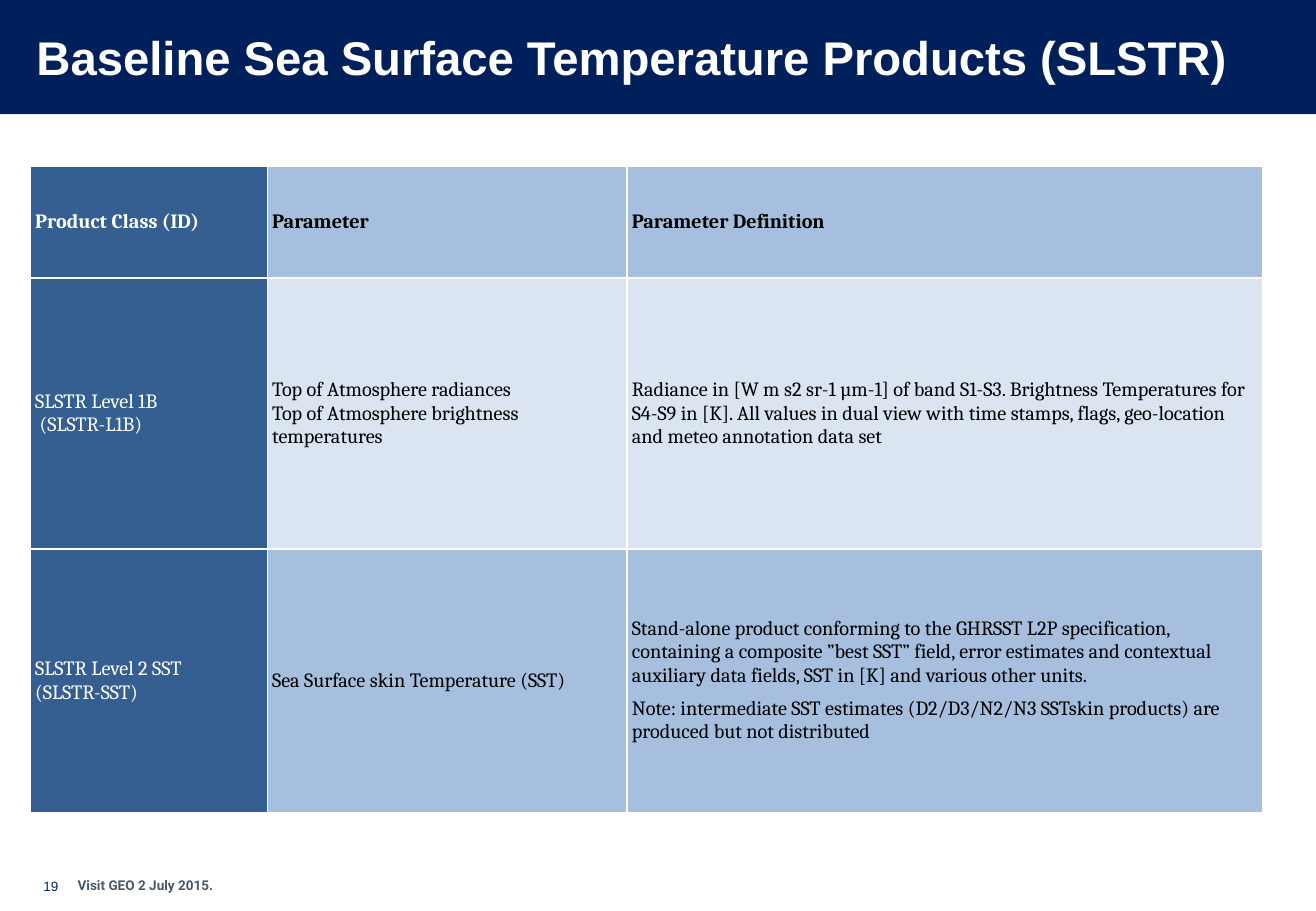
from lxml import etree
from pptx import Presentation
from pptx.dml.color import RGBColor
from pptx.enum.shapes import MSO_SHAPE
from pptx.enum.text import MSO_ANCHOR, PP_ALIGN
from pptx.oxml.ns import qn
from pptx.util import Inches, Pt

RECTANGLE = MSO_SHAPE.RECTANGLE
MIDDLE, TOP = MSO_ANCHOR.MIDDLE, MSO_ANCHOR.TOP
LEFT, CENTER = PP_ALIGN.LEFT, PP_ALIGN.CENTER

COLORS = {
    "navy": "00205B",
    "number": "002569",
    "footer": "47586A",
    "white": "FFFFFF",
    "black": "000000",
    "class": "365F91",
    "band": "A7BFDE",
    "pale": "DBE5F1",
}

COLUMN_WIDTHS = [1.95, 2.96, 5.23]
ROW_HEIGHTS = [0.92, 2.23, 2.17]
ROW_FILLS = ["band", "pale", "band"]
PRODUCTS = [
    [["Product Class (ID)"], ["Parameter"], ["Parameter Definition"]],
    [
        ["SLSTR Level 1B\n (SLSTR-L1B)"],
        ["Top of Atmosphere radiances\nTop of Atmosphere brightness temperatures"],
        ["Radiance in [W m s2 sr-1 µm-1] of band S1-S3. Brightness Temperatures for "
         "S4-S9 in [K]. All values in dual view with time stamps, flags, geo-location "
         "and meteo annotation data set"],
    ],
    [
        ["SLSTR Level 2 SST\n(SLSTR-SST)"],
        ["Sea Surface skin Temperature (SST)"],
        ["Stand-alone product conforming to the GHRSST L2P specification, containing "
         "a composite ”best SST” field, error estimates and contextual auxiliary data "
         "fields, SST in [K] and various other units.",
         "Note: intermediate SST estimates (D2/D3/N2/N3 SSTskin products) are "
         "produced but not distributed"],
    ],
]


class SlideBuilder:
    def __init__(self, slide):
        self.slide = slide

    def color(self, name):
        return RGBColor.from_string(COLORS[name])

    def add_run(self, paragraph, text, font, size, color, bold=False):
        for index, line in enumerate(text.split("\n")):
            if index:
                paragraph.add_line_break()
            run = paragraph.add_run()
            run.text = line
            run.font.name = font
            run.font.size = Pt(size)
            run.font.bold = bold
            run.font.color.rgb = self.color(color)

    def rectangle(self, left, top, width, height, fill):
        shape = self.slide.shapes.add_shape(
            RECTANGLE, Inches(left), Inches(top), Inches(width), Inches(height))
        shape.shadow.inherit = False
        shape.fill.solid()
        shape.fill.fore_color.rgb = self.color(fill)
        shape.line.fill.background()

    def text(self, left, top, width, height, text, font, size, color, bold=False,
             align=LEFT, anchor=TOP, margins=(0.1, 0.05), wrap=True):
        box = self.slide.shapes.add_textbox(
            Inches(left), Inches(top), Inches(width), Inches(height))
        frame = box.text_frame
        frame.word_wrap = wrap
        frame.vertical_anchor = anchor
        frame.margin_left = frame.margin_right = Inches(margins[0])
        frame.margin_top = frame.margin_bottom = Inches(margins[1])
        paragraph = frame.paragraphs[0]
        paragraph.alignment = align
        self.add_run(paragraph, text, font, size, color, bold)

    def cell_borders(self, cell):
        properties = cell._tc.get_or_add_tcPr()
        for index, side in enumerate(("a:lnT", "a:lnB")):
            line = etree.Element(qn(side), w=str(Pt(1)))
            fill = etree.SubElement(line, qn("a:solidFill"))
            etree.SubElement(fill, qn("a:srgbClr"), val=COLORS["white"])
            properties.insert(index, line)

    def fill_cell(self, cell, paragraphs, fill, color, bold):
        cell.fill.solid()
        cell.fill.fore_color.rgb = self.color(fill)
        cell.vertical_anchor = MIDDLE
        cell.margin_left = cell.margin_right = Inches(0.04)
        cell.margin_top = cell.margin_bottom = 0
        for index, text in enumerate(paragraphs):
            frame = cell.text_frame
            paragraph = frame.add_paragraph() if index else frame.paragraphs[0]
            paragraph.space_before = Pt(3 if index else 0)
            paragraph.space_after = Pt(3)
            self.add_run(paragraph, text, "Cambria", 12, color, bold)
        self.cell_borders(cell)

    def table(self, left, top, rows):
        table = self.slide.shapes.add_table(
            len(rows), len(COLUMN_WIDTHS), Inches(left), Inches(top),
            Inches(sum(COLUMN_WIDTHS)), Inches(sum(ROW_HEIGHTS))).table
        table.horz_banding = False
        for column, width in zip(table.columns, COLUMN_WIDTHS):
            column.width = Inches(width)
        for row, height in zip(table.rows, ROW_HEIGHTS):
            row.height = Inches(height)
        for row_index, row in enumerate(rows):
            for column_index, paragraphs in enumerate(row):
                is_class = column_index == 0
                self.fill_cell(
                    table.cell(row_index, column_index), paragraphs,
                    "class" if is_class else ROW_FILLS[row_index],
                    "white" if is_class else "black", bold=row_index == 0)


def main():
    presentation = Presentation()
    presentation.slide_width = Inches(10.83)
    presentation.slide_height = Inches(7.5)
    builder = SlideBuilder(presentation.slides.add_slide(presentation.slide_layouts[6]))
    builder.text(0.35, 7.23, 0.14, 0.13, "19", "Arial", 8, "number",
                 align=CENTER, margins=(0, 0), wrap=False)
    builder.text(0.54, 7.17, 4.92, 0.24, "Visit GEO 2 July 2015.", "Roboto", 8,
                 "footer", bold=True)
    builder.rectangle(0, 0, 10.83, 0.94, "navy")
    builder.text(0, 0, 10.72, 0.93, "Baseline Sea Surface Temperature Products (SLSTR)",
                 "Arial", 28, "white", bold=True, anchor=MIDDLE, margins=(0.3, 0.05))
    builder.table(0.25, 1.37, PRODUCTS)
    presentation.save("out.pptx")


if __name__ == "__main__":
    main()
